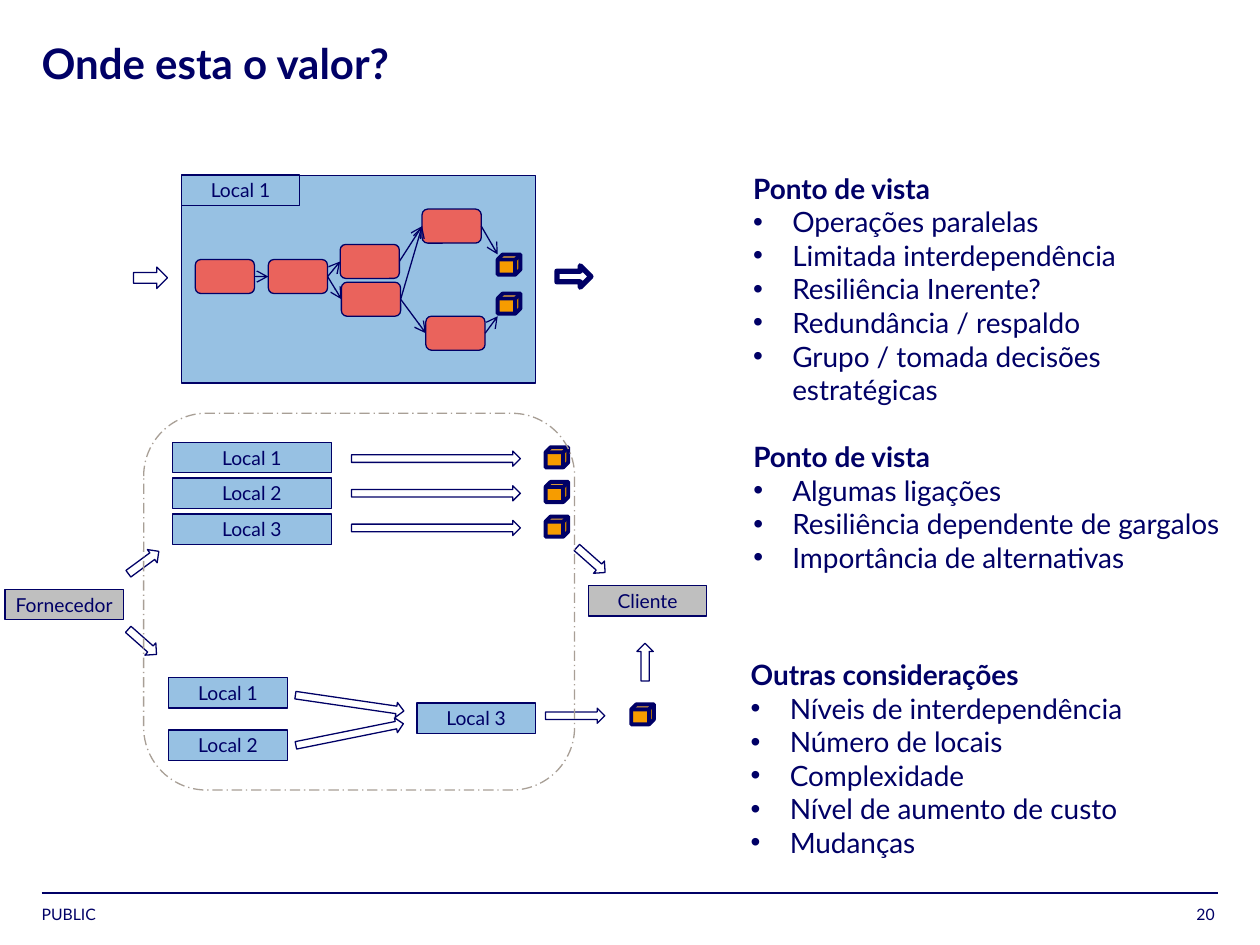
from dataclasses import dataclass

from lxml.etree import SubElement
from pptx import Presentation
from pptx.dml.color import RGBColor
from pptx.enum.dml import MSO_LINE
from pptx.enum.shapes import MSO_CONNECTOR, MSO_SHAPE
from pptx.enum.text import MSO_ANCHOR, PP_ALIGN
from pptx.oxml.ns import qn
from pptx.util import Inches, Pt

NAVY = RGBColor(0x00, 0x00, 0x66)
BLUE = RGBColor(0x97, 0xC1, 0xE3)
RED = RGBColor(0xEA, 0x63, 0x5C)
ORANGE = RGBColor(0xF6, 0x9C, 0x00)
GRAY = RGBColor(0xBF, 0xBF, 0xBF)
TAUPE = RGBColor(0xA8, 0x9F, 0x96)
FONT = "Lato"
CELL = Inches(0.1)  # the slide is a grid of 100 columns by 75 rows
TOP, LEFT, BOTTOM, RIGHT = range(4)
LABEL_SIZE = (9.4, 2.4)
CUBE_SIZE = (1.8, 1.6)
STEP_SIZE = (4.7, 2.7)
SHORT_ARROW = (3, 1.3)


@dataclass
class Box:
    """An area in grid columns and rows."""
    left: float
    top: float
    width: float
    height: float

    def inner(self, column, row, width, height):
        return Box(self.left + column, self.top + row, width, height)

    def lengths(self):
        return [round(value * CELL) for value in
                (self.left, self.top, self.width, self.height)]


def style_font(font, size, bold=False):
    font.name, font.size, font.bold = FONT, Pt(size), bold
    font.color.rgb = NAVY


def set_insets(text_frame, horizontal, vertical):
    text_frame.margin_left = text_frame.margin_right = Inches(horizontal)
    text_frame.margin_top = text_frame.margin_bottom = Inches(vertical)


def add_block(slide, kind, box, fill=None, line=NAVY, weight=0.75, rotation=0):
    shape = slide.shapes.add_shape(kind, *box.lengths())
    shape.shadow.inherit = False
    shape.rotation = rotation
    if fill is None:
        shape.fill.background()
    else:
        shape.fill.solid()
        shape.fill.fore_color.rgb = fill
    shape.line.color.rgb = line
    shape.line.width = Pt(weight)
    return shape


def add_label(slide, box, text, fill=BLUE):
    shape = add_block(slide, MSO_SHAPE.RECTANGLE, box, fill)
    frame = shape.text_frame
    set_insets(frame, 0, 0.04)
    frame.vertical_anchor = MSO_ANCHOR.MIDDLE
    frame.text = text
    frame.paragraphs[0].alignment = PP_ALIGN.CENTER
    style_font(frame.paragraphs[0].runs[0].font, 11)


def add_arrow(slide, box, rotation=0, weight=0.75):
    add_block(slide, MSO_SHAPE.RIGHT_ARROW, box, weight=weight, rotation=rotation)


def add_cube(slide, box):
    add_block(slide, MSO_SHAPE.CUBE, box, ORANGE, weight=2.25)


def add_line(slide, start=(0, 0), end=(0, 0), weight=0.75, arrow=False):
    points = [round(value * CELL) for value in (*start, *end)]
    connector = slide.shapes.add_connector(MSO_CONNECTOR.STRAIGHT, *points)
    connector.line.color.rgb = NAVY
    connector.line.width = Pt(weight)
    properties = connector._element.spPr
    if arrow:
        SubElement(properties.find(qn("a:ln")), qn("a:tailEnd"), type="arrow")
    SubElement(properties, qn("a:effectLst"))
    return connector


def add_small_text(slide, box, text, alignment):
    frame = slide.shapes.add_textbox(*box.lengths()).text_frame
    frame.word_wrap = True
    set_insets(frame, 0, 0)
    frame.text = text
    frame.paragraphs[0].alignment = alignment
    style_font(frame.paragraphs[0].runs[0].font, 9)


def build_title(slide, box, text):
    title = slide.shapes.title
    title.left, title.top, title.width, title.height = box.lengths()
    frame = title.text_frame
    set_insets(frame, 0, 0)
    frame.vertical_anchor = MSO_ANCHOR.TOP
    frame.text = text
    paragraph = frame.paragraphs[0]
    paragraph.alignment = PP_ALIGN.LEFT
    paragraph.line_spacing = 0.9
    style_font(paragraph.runs[0].font, 24, bold=True)


def build_footer(slide, box):
    add_line(slide, (box.left, box.top), (box.left + box.width, box.top), 1)
    add_small_text(slide, box.inner(0, 0.9, 12.8, 1.5), "PUBLIC", PP_ALIGN.LEFT)
    add_small_text(slide, box.inner(89.2, 0.9, 3.9, 1.7), "20", PP_ALIGN.RIGHT)


def build_list(slide, box, heading, items):
    frame = slide.shapes.add_textbox(*box.lengths()).text_frame
    frame.word_wrap = True
    frame.text = heading
    style_font(frame.paragraphs[0].runs[0].font, 16, bold=True)
    for item in items:
        paragraph = frame.add_paragraph()
        paragraph.text = item
        properties = paragraph._p.get_or_add_pPr()
        properties.set("marL", str(Inches(0.31)))
        properties.set("indent", str(-Inches(0.31)))
        SubElement(properties, qn("a:buFont"), typeface="Arial")
        SubElement(properties, qn("a:buChar"), char="•")
        style_font(paragraph.runs[0].font, 16)


def build_parallel_sites(slide, box):
    """Three sites, each with its own output."""
    pitch = box.height / 3
    for index in range(3):
        row = index * pitch
        add_label(slide, box.inner(0, row, 12.6, 2.4), f"Local {index + 1}")
        row = 0.7 + index * 2.75
        add_arrow(slide, box.inner(14.2, row, 13.4, 1.2))
        add_cube(slide, box.inner(29.6, row - 0.3, *CUBE_SIZE))


def build_joined_sites(slide, box):
    """Two sites that feed a third one."""
    for text, column, row in (("Local 1", 0, 0), ("Local 2", 0, 4.15),
                              ("Local 3", 19.7, 2)):
        add_label(slide, box.inner(column, row, *LABEL_SIZE), text)
    add_arrow(slide, box.inner(10, 1.4, 8.7, 1.2), 8.3)
    add_arrow(slide, box.inner(10, 3.9, 8.7, 1.2), 348.6)
    add_arrow(slide, box.inner(29.9, 2.4, 4.7, 1.2))
    add_cube(slide, box.inner(36.7, 2.1, *CUBE_SIZE))


def build_single_site(slide, box):
    """Steps inside one site, with its input and output arrows."""
    add_block(slide, MSO_SHAPE.RECTANGLE, box, BLUE)
    places = {"intake": (1.1, 6.7), "split": (6.9, 6.7),
              "upper": (12.6, 5.5), "lower": (12.7, 8.5),
              "upper end": (19.1, 2.7), "lower end": (19.4, 11.2)}
    steps = {name: add_block(slide, MSO_SHAPE.ROUNDED_RECTANGLE,
                             box.inner(*place, *STEP_SIZE), RED)
             for name, place in places.items()}
    for row in (6.3, 9.4):
        add_cube(slide, box.inner(25.1, row, *CUBE_SIZE))
    for source, target in (("intake", "split"), ("split", "upper"),
                           ("split", "lower"), ("upper", "upper end"),
                           ("lower", "upper end"), ("lower", "lower end")):
        connector = add_line(slide, arrow=True)
        connector.begin_connect(steps[source], RIGHT)
        connector.end_connect(steps[target], LEFT)
    for source, row in (("upper end", 6.3), ("lower end", 11.2)):
        connector = add_line(slide, end=(box.left + 25.1, box.top + row), arrow=True)
        connector.begin_connect(steps[source], RIGHT)
    add_label(slide, box.inner(0, 0, *LABEL_SIZE), "Local 1")
    add_arrow(slide, box.inner(-3.8, 7.3, 2.7, 1.7))
    add_arrow(slide, box.inner(29.8, 7.2, 2.7, 1.7), weight=3)


def build_supply_chain(slide, box):
    """Supplier and client around the dashed frame."""
    add_label(slide, box.inner(-11, 14, *LABEL_SIZE), "Fornecedor", GRAY)
    add_label(slide, box.inner(35.3, 13.7, *LABEL_SIZE), "Cliente", GRAY)
    for column, row, rotation in ((-1.5, 11.2, 323.6), (-1.6, 17.5, 41.5),
                                  (38.3, 19.1, 270), (34, 11, 41.5)):
        add_arrow(slide, box.inner(column, row, *SHORT_ARROW), rotation)
    frame = add_block(slide, MSO_SHAPE.ROUNDED_RECTANGLE, box, line=TAUPE)
    frame.line.dash_style = MSO_LINE.LONG_DASH_DOT


def main():
    presentation = Presentation()
    presentation.slide_width, presentation.slide_height = 100 * CELL, 75 * CELL
    slide = presentation.slides.add_slide(presentation.slide_layouts[5])
    build_footer(slide, Box(3.3, 70.9, 93.4, 2.6))
    build_title(slide, Box(3.3, 3.4, 83.7, 3.9), "Onde esta o valor?")
    build_parallel_sites(slide, Box(13.7, 35.1, 31.4, 8.55))
    build_joined_sites(slide, Box(13.4, 53.8, 38.5, 6.5))
    build_list(slide, Box(58.8, 13.1, 40.6, 19.9), "Ponto de vista", (
        "Operações paralelas", "Limitada interdependência", "Resiliência Inerente?",
        "Redundância / respaldo", "Grupo / tomada decisões estratégicas"))
    build_list(slide, Box(58.8, 34.4, 40.8, 14.5), "Ponto de vista", (
        "Algumas ligações", "Resiliência dependente de gargalos",
        "Importância de alternativas"))
    build_list(slide, Box(58.6, 51.7, 40.8, 17.2), "Outras considerações", (
        "Níveis de interdependência", "Número de locais", "Complexidade",
        "Nível de aumento de custo", "Mudanças"))
    build_single_site(slide, Box(14.4, 13.9, 28.1, 16.5))
    build_supply_chain(slide, Box(11.4, 32.8, 34.2, 29.9))
    presentation.save("out.pptx")


if __name__ == "__main__":
    main()
